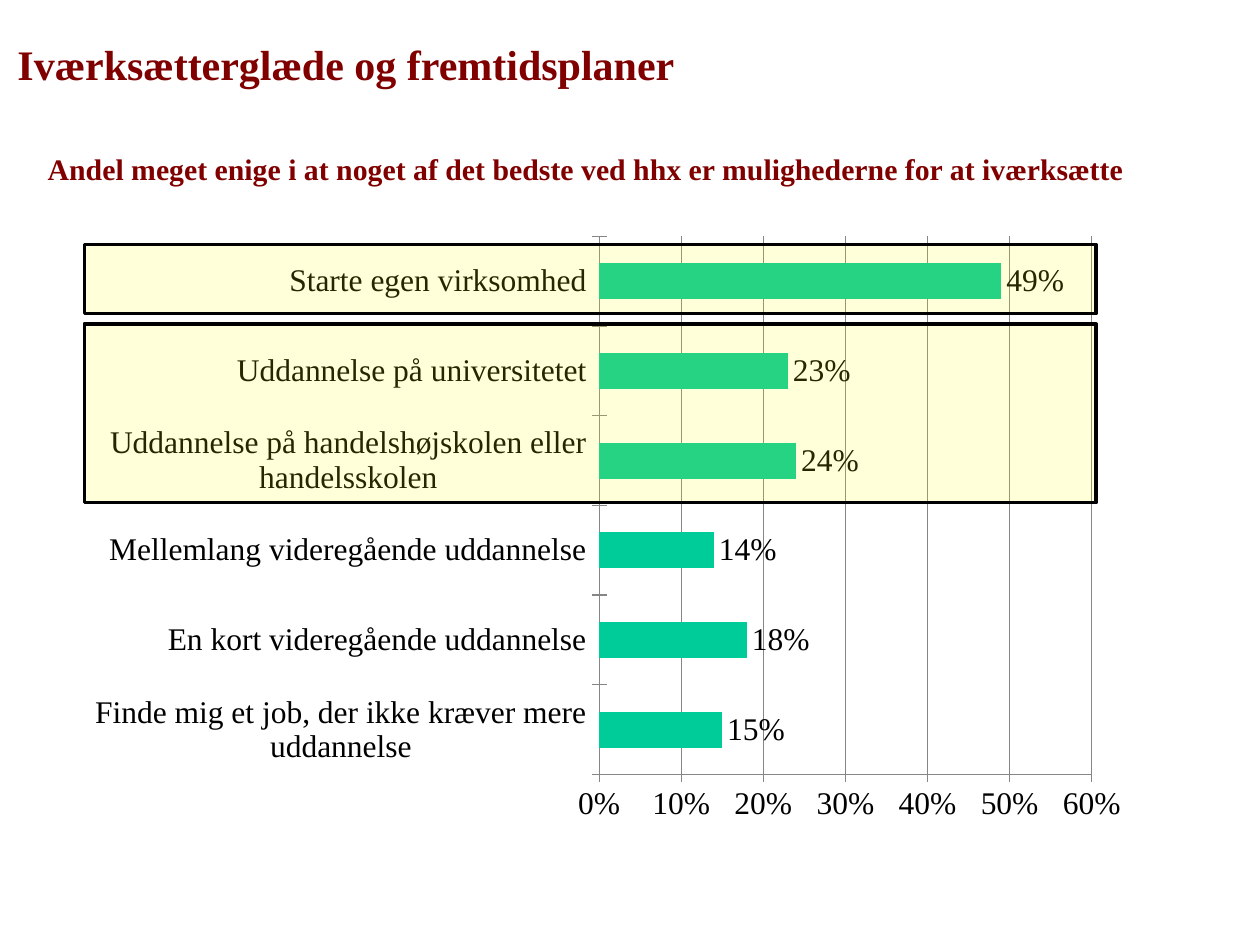
from dataclasses import dataclass

from lxml import etree
from pptx import Presentation
from pptx import util as u
from pptx.chart.data import CategoryChartData
from pptx.dml.color import RGBColor
from pptx.enum import chart as ch, shapes
from pptx.oxml import parse_xml
from pptx.oxml.ns import nsdecls, qn


@dataclass(frozen=True)
class Theme:
    font: str = "Times New Roman"
    heading: RGBColor = RGBColor(0x80, 0x00, 0x00)
    ink: RGBColor = RGBColor(0x00, 0x00, 0x00)
    grid: RGBColor = RGBColor(0x86, 0x86, 0x86)
    bar: RGBColor = RGBColor(0x00, 0xCC, 0x99)
    highlight: RGBColor = RGBColor(0xFF, 0xFF, 0x00)
    highlight_opacity: int = 15
    title_size: int = 24
    subtitle_size: int = 17
    chart_size: int = 18


THEME = Theme()

SHARES = {
    "Finde mig et job, der ikke kræver mere uddannelse": 0.15,
    "En kort videregående uddannelse": 0.18,
    "Mellemlang videregående uddannelse": 0.14,
    "Uddannelse på handelshøjskolen eller handelsskolen": 0.24,
    "Uddannelse på universitetet": 0.23,
    "Starte egen virksomhed": 0.49,
}


def inches(box):
    return [u.Inches(v) for v in box]


def add_heading(slide, box, words, size):
    tf = slide.shapes.add_textbox(*inches(box)).text_frame
    tf.word_wrap = True
    r = tf.paragraphs[0].add_run()
    r.text = words
    r.font.name = THEME.font
    r.font.size = u.Pt(size)
    r.font.bold = True
    r.font.color.rgb = THEME.heading


def set_plot_layout(chart, x, y, w, h):
    plot_area = chart.plots[0]._element.getparent()
    for old in plot_area.findall(qn("c:layout")):
        plot_area.remove(old)
    plot_area.insert(0, parse_xml(
        f'<c:layout {nsdecls("c")}><c:manualLayout>'
        '<c:layoutTarget val="inner"/><c:xMode val="edge"/><c:yMode val="edge"/>'
        f'<c:x val="{x}"/><c:y val="{y}"/><c:w val="{w}"/><c:h val="{h}"/>'
        '</c:manualLayout></c:layout>'))


def style_axis(axis):
    axis.major_tick_mark = ch.XL_TICK_MARK.CROSS
    axis.minor_tick_mark = ch.XL_TICK_MARK.NONE
    axis.format.line.color.rgb = THEME.grid
    axis.format.line.width = u.Pt(0.75)


def add_share_chart(slide, box):
    data = CategoryChartData(number_format="0%")
    data.categories = list(SHARES)
    data.add_series("Series 1", list(SHARES.values()))
    chart = slide.shapes.add_chart(
        ch.XL_CHART_TYPE.BAR_CLUSTERED, *inches(box), data).chart
    chart.has_title = False
    chart.has_legend = False
    chart.font.name = THEME.font
    chart.font.size = u.Pt(THEME.chart_size)
    chart.font.color.rgb = THEME.ink

    plot = chart.plots[0]
    plot.vary_by_categories = False
    plot.gap_width = 150
    plot.has_data_labels = True
    labels = plot.data_labels
    labels.show_value = True
    labels.number_format = "0%"
    labels.number_format_is_linked = False
    labels.position = ch.XL_LABEL_POSITION.OUTSIDE_END
    fill = plot.series[0].format.fill
    fill.solid()
    fill.fore_color.rgb = THEME.bar

    style_axis(chart.category_axis)
    values = chart.value_axis
    style_axis(values)
    values.minimum_scale = 0
    values.maximum_scale = 0.6
    values.major_unit = 0.1
    values.tick_labels.number_format = "0%"
    values.tick_labels.number_format_is_linked = False
    values.has_major_gridlines = True
    values.major_gridlines.format.line.color.rgb = THEME.grid
    values.major_gridlines.format.line.width = u.Pt(0.75)
    set_plot_layout(chart, 0.49, 0.02, 0.46, 0.89)


def add_highlight(slide, box):
    sp = slide.shapes.add_shape(shapes.MSO_SHAPE.RECTANGLE, *inches(box))
    sp.shadow.inherit = False
    sp.fill.solid()
    sp.fill.fore_color.rgb = THEME.highlight
    color = sp.fill._xPr.find(qn("a:solidFill"))[0]
    alpha = etree.SubElement(color, qn("a:alpha"))
    alpha.set("val", str(THEME.highlight_opacity * 1000))
    sp.line.color.rgb = THEME.ink
    sp.line.width = u.Pt(2)


def main():
    prs = Presentation()
    prs.slide_width, prs.slide_height = u.Inches(10), u.Inches(7.5)
    s = prs.slides.add_slide(prs.slide_layouts[6])
    add_share_chart(s, (0.59, 1.78, 8.5, 4.8))
    add_heading(s, (0.04, 0.26, 7.25, 0.5),
                "Iværksætterglæde og fremtidsplaner", THEME.title_size)
    for top, height in ((1.94, 0.55), (2.57, 1.42)):
        add_highlight(s, (0.67, top, 8.03, height))
    add_heading(s, (0.28, 1.15, 9.72, 0.67),
                "Andel meget enige i at noget af det bedste ved hhx er "
                "mulighederne for at iværksætte", THEME.subtitle_size)
    prs.save("out.pptx")


if __name__ == "__main__":
    main()
